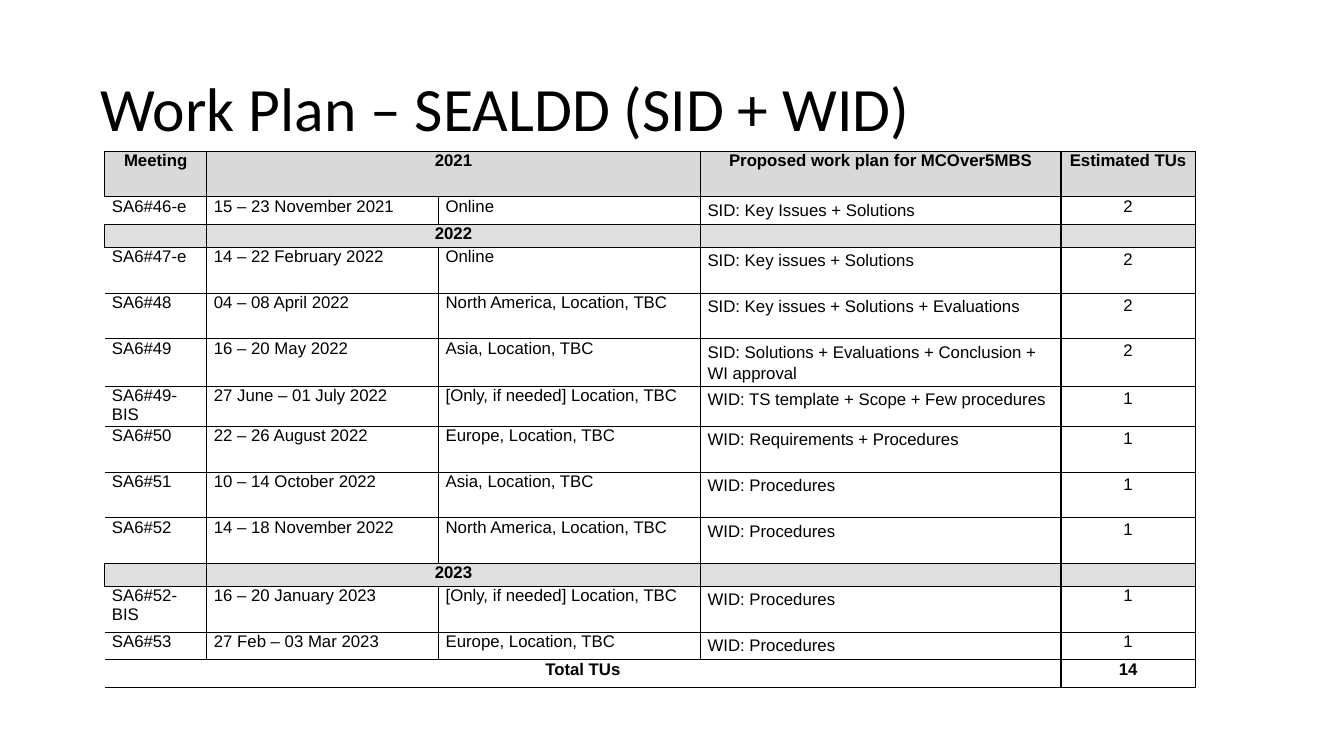
from lxml import etree
from pptx import Presentation
from pptx.dml.color import RGBColor
from pptx.enum.text import MSO_ANCHOR, PP_ALIGN
from pptx.oxml.ns import qn
from pptx.util import Cm, Pt

LEFT, CENTER = PP_ALIGN.LEFT, PP_ALIGN.CENTER
MIDDLE = MSO_ANCHOR.MIDDLE

BLACK, WHITE = "000000", "FFFFFF"
HEADER_GREY, YEAR_GREY = "D9D9D9", "DFDFDF"
TITLE = {"name": "Calibri", "size": Pt(44)}
BODY = {"name": "Arial", "size": Pt(12), "bold": False}
STRONG = BODY | {"bold": True}

COLUMN_WIDTHS = [2.57, 5.84, 6.6, 9.09, 3.38]
TALL, LOW, YEAR = 1.15, 0.7, 0.58
WIDE_LINES = 1.15

HEADER = ["Meeting", "2021", None, "Proposed work plan for MCOver5MBS", "Estimated TUs"]

# Each year: row height, meeting, dates, place, plan, estimated TUs
MEETINGS = {
    "2021": [
        (LOW, "SA6#46-e", "15 – 23 November 2021", "Online",
         "SID: Key Issues + Solutions", 2),
    ],
    "2022": [
        (TALL, "SA6#47-e", "14 – 22 February 2022", "Online",
         "SID: Key issues + Solutions", 2),
        (TALL, "SA6#48", "04 – 08 April 2022", "North America, Location, TBC",
         "SID: Key issues + Solutions + Evaluations", 2),
        (1.12, "SA6#49", "16 – 20 May 2022", "Asia, Location, TBC",
         "SID: Solutions + Evaluations + Conclusion + WI approval", 2),
        (0.96, "SA6#49-BIS", "27 June – 01 July 2022", "[Only, if needed] Location, TBC",
         "WID: TS template + Scope + Few procedures", 1),
        (TALL, "SA6#50", "22 – 26 August 2022", "Europe, Location, TBC",
         "WID: Requirements + Procedures", 1),
        (TALL, "SA6#51", "10 – 14 October 2022", "Asia, Location, TBC",
         "WID: Procedures", 1),
        (TALL, "SA6#52", "14 – 18 November 2022", "North America, Location, TBC",
         "WID: Procedures", 1),
    ],
    "2023": [
        (TALL, "SA6#52-BIS", "16 – 20 January 2023", "[Only, if needed] Location, TBC",
         "WID: Procedures", 1),
        (LOW, "SA6#53", "27 Feb – 03 Mar 2023", "Europe, Location, TBC",
         "WID: Procedures", 1),
    ],
}


def color(value):
    return RGBColor.from_string(value)


def set_all(target, values):
    for name, value in values.items():
        setattr(target, name, value)


def write(para, text, font, **layout):
    set_all(para, layout)
    if text:
        span = para.add_run()
        span.text = text
        set_all(span.font, font)
        span.font.color.rgb = color(BLACK)
    else:
        # An empty cell keeps the body size so its row stays low
        etree.SubElement(para._p, qn("a:endParaRPr"), sz=str(int(font["size"].pt * 100)))


def add_title(page, text):
    box = page.shapes.add_textbox(Cm(2.29), Cm(0.97), Cm(29.21), Cm(3.68))
    set_all(box.text_frame, {"word_wrap": True, "vertical_anchor": MIDDLE})
    write(box.text_frame.paragraphs[0], text, TITLE, line_spacing=0.9)


def set_borders(cell, open_left):
    properties = cell._tc.get_or_add_tcPr()
    for position, side in enumerate(("lnL", "lnR", "lnT", "lnB")):
        line = etree.Element(qn(f"a:{side}"), w=str(Pt(1)))
        if side == "lnL" and open_left:
            etree.SubElement(line, qn("a:noFill"))
        else:
            fill = etree.SubElement(line, qn("a:solidFill"))
            etree.SubElement(fill, qn("a:srgbClr"), val=BLACK)
        properties.insert(position, line)


def fill_cell(cell, text, font, fill, align, spacing=1.0, side=0.18, top=0, open_left=False):
    set_all(cell, {"margin_left": Cm(side), "margin_right": Cm(side),
                   "margin_top": Cm(top), "margin_bottom": Cm(0)})
    cell.fill.solid()
    cell.fill.fore_color.rgb = color(fill)
    set_borders(cell, open_left)
    write(cell.text_frame.paragraphs[0], text, font, alignment=align,
          line_spacing=spacing, space_before=Pt(1), space_after=Pt(1))


def fill_band(table, row, texts, fill, merged, open_left=False):
    """A bold, centred row in which the cells of the merged range are joined."""
    for column, text in enumerate(texts):
        fill_cell(table.cell(row, column), text, STRONG, fill, CENTER,
                  open_left=open_left and column == 0)
    first, last = merged
    table.cell(row, first).merge(table.cell(row, last))


def fill_meeting(table, row, year, texts):
    *details, plan, units = texts
    for column, text in enumerate(details):
        fill_cell(table.cell(row, column), text, BODY, WHITE, LEFT, open_left=column == 0)
    fill_cell(table.cell(row, 3), plan, BODY, WHITE, LEFT, WIDE_LINES, top=0.03)
    unit_format = {"spacing": WIDE_LINES, "side": 0} if year == "2022" else {}
    fill_cell(table.cell(row, 4), str(units), BODY, WHITE, CENTER, **unit_format)


def add_work_plan(page):
    # The first year shares the header row; later years have their own band
    heights = []
    for year, meetings in MEETINGS.items():
        heights.append(YEAR if heights else TALL)
        heights += [meeting[0] for meeting in meetings]
    heights.append(LOW)

    frame = page.shapes.add_table(len(heights), len(COLUMN_WIDTHS), Cm(2.64), Cm(3.81),
                                  Cm(sum(COLUMN_WIDTHS)), Cm(sum(heights)))
    table = frame.table
    set_all(table, {"first_row": False, "horz_banding": False})
    for column, width in zip(table.columns, COLUMN_WIDTHS):
        column.width = Cm(width)
    for line, height in zip(table.rows, heights):
        line.height = Cm(height)

    row = total = 0
    for year, meetings in MEETINGS.items():
        if row == 0:
            fill_band(table, row, HEADER, HEADER_GREY, (1, 2))
        else:
            fill_band(table, row, [None, year, None, None, None], YEAR_GREY, (1, 2))
        for row, (_, *texts) in enumerate(meetings, row + 1):
            fill_meeting(table, row, year, texts)
            total += texts[-1]
        row += 1
    totals = ["Total TUs", None, None, None, str(total)]
    fill_band(table, row, totals, WHITE, (0, 3), open_left=True)


def main():
    deck = Presentation()
    set_all(deck, {"slide_width": Cm(33.87), "slide_height": Cm(19.05)})
    page = deck.slides.add_slide(deck.slide_layouts[6])
    add_title(page, "Work Plan – SEALDD (SID + WID)")
    add_work_plan(page)
    deck.save("out.pptx")


if __name__ == "__main__":
    main()
